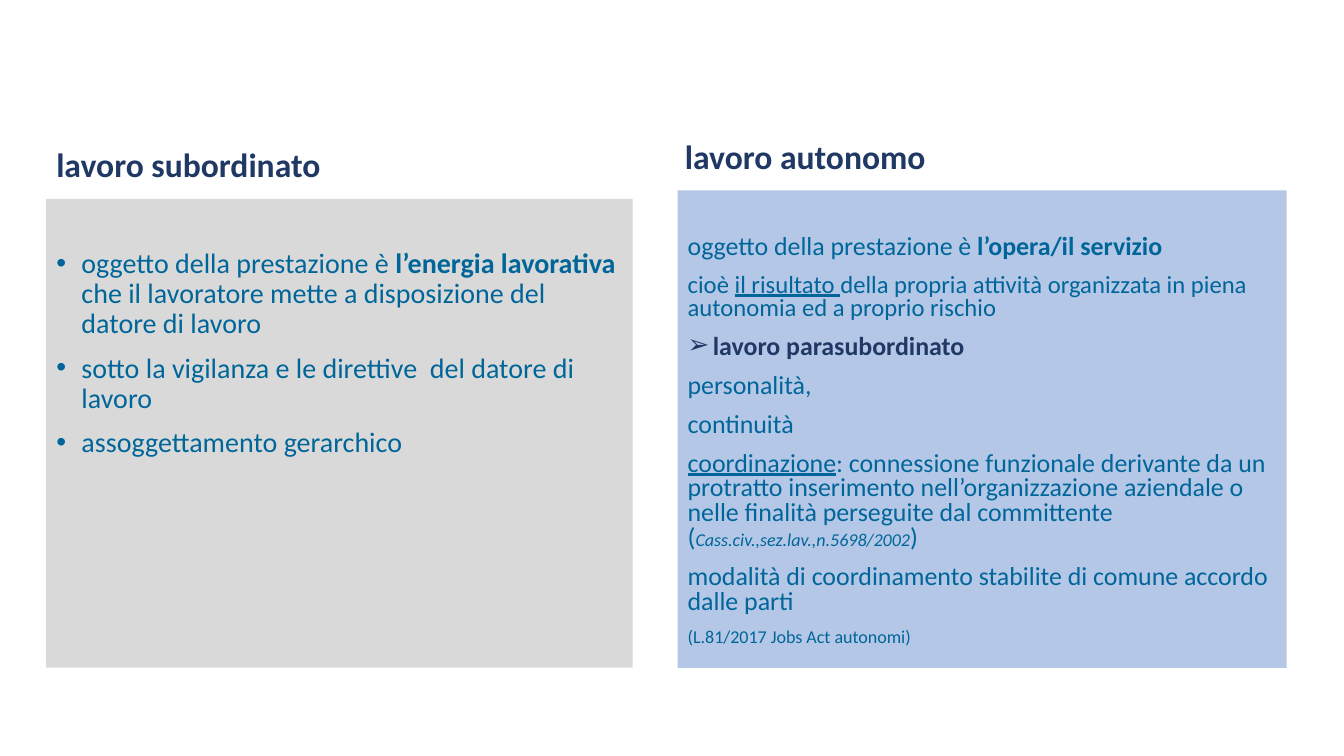
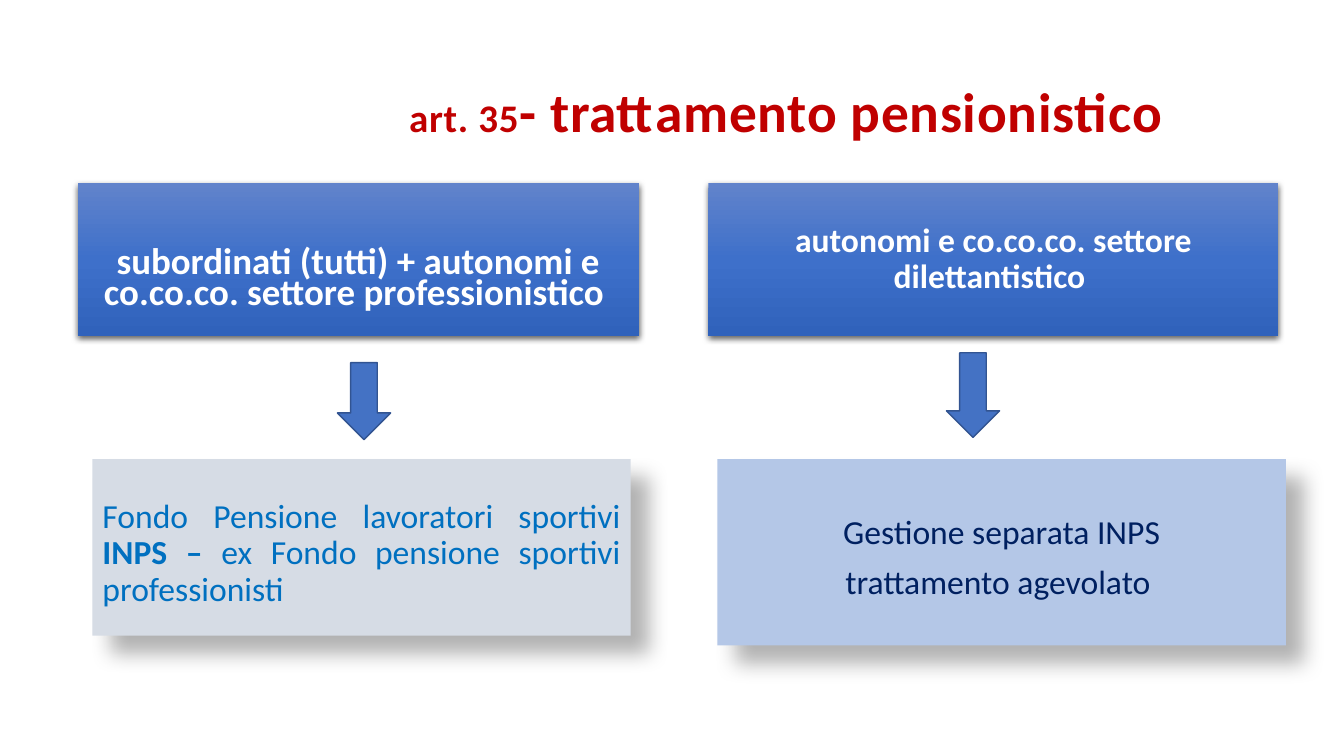
from dataclasses import dataclass

from pptx import Presentation
from pptx.dml.color import RGBColor
from pptx.enum.shapes import MSO_SHAPE
from pptx.enum.text import MSO_ANCHOR as Anchor, MSO_AUTO_SIZE as AutoSize, PP_ALIGN as Align
from pptx.oxml import parse_xml
from pptx.oxml.ns import nsdecls
from pptx.util import Pt

FONT = "Calibri"
NAVY = RGBColor(0x20, 0x38, 0x64)
DEEP_BLUE = RGBColor(0x00, 0x20, 0x60)
TEAL = RGBColor(0x00, 0x66, 0x99)
SKY = RGBColor(0x00, 0x70, 0xC0)
RED = RGBColor(0xC0, 0x00, 0x00)
WHITE = RGBColor(0xFF, 0xFF, 0xFF)
GREY = RGBColor(0xD9, 0xD9, 0xD9)
BLUE_GREY = RGBColor(0xD6, 0xDC, 0xE5)
LIGHT_BLUE = RGBColor(0xB4, 0xC7, 0xE7)
ARROW_FILL = RGBColor(0x44, 0x72, 0xC4)
ARROW_LINE = RGBColor(0x32, 0x54, 0x91)
HEADER_GRADIENT = (
    (0, RGBColor(0x61, 0x83, 0xCB)),
    (50, RGBColor(0x3E, 0x70, 0xCA)),
    (100, RGBColor(0x30, 0x62, 0xBB)),
)
INSET = 3.6
BULLET_INDENT = 18


@dataclass(frozen=True)
class Span:
    text: str
    size: float | None = None
    color: RGBColor | None = None
    bold: bool = False
    italic: bool = False
    underline: bool = False


@dataclass(frozen=True)
class Line:
    spans: tuple[Span, ...]
    bullet: str = ""


@dataclass(frozen=True)
class Shadow:
    opacity: int
    blur: float
    distance: float
    angle: int


@dataclass(frozen=True)
class Panel:
    """A placeholder of the comparison layout, with its frame and text format."""

    index: int
    frame: tuple[float, float, float, float]
    lines: tuple[Line, ...]
    size: float
    color: RGBColor
    fill: RGBColor | None = None
    gradient: tuple = ()
    shadow: Shadow | None = None
    align: Align = Align.LEFT
    anchor: Anchor = Anchor.TOP
    spacing: float = 0.9
    top: float = INSET
    right: float = 7.2
    bottom: float = INSET
    tracking: float = 0


HEADER_SHADOW = Shadow(63, 4.5, 1.5, 90)
CARD_SHADOW = Shadow(30, 15, 18, 45)


def line(*spans: Span | str, bullet: str = "") -> Line:
    return Line(tuple(Span(s) if isinstance(s, str) else s for s in spans), bullet)


def add_gradient(shape, stops: tuple) -> None:
    stop_xml = "".join(
        f'<a:gs pos="{position * 1000}"><a:srgbClr val="{color}"/></a:gs>'
        for position, color in stops
    )
    shape._element.spPr.append(parse_xml(
        f'<a:gradFill {nsdecls("a")} rotWithShape="1"><a:gsLst>{stop_xml}</a:gsLst>'
        '<a:lin ang="5400000" scaled="0"/></a:gradFill>'))


def add_shadow(shape, shadow: Shadow) -> None:
    shape._element.spPr.append(parse_xml(
        f'<a:effectLst {nsdecls("a")}><a:outerShdw blurRad="{Pt(shadow.blur)}" '
        f'dist="{Pt(shadow.distance)}" dir="{shadow.angle * 60000}" rotWithShape="0">'
        f'<a:srgbClr val="000000"><a:alpha val="{shadow.opacity * 1000}"/></a:srgbClr>'
        '</a:outerShdw></a:effectLst>'))


def set_bullet(paragraph, bullet: str) -> None:
    properties = paragraph._p.get_or_add_pPr()
    indent = Pt(BULLET_INDENT) if bullet else 0
    properties.set("marL", str(indent))
    properties.set("indent", str(-indent))
    tag = f'buChar {nsdecls("a")} char="{bullet}"' if bullet else f'buNone {nsdecls("a")}'
    properties.append(parse_xml(f"<a:{tag}/>"))


def add_run(paragraph, text: str, *, size: float, color: RGBColor, bold: bool = False,
            italic: bool = False, underline: bool = False, tracking: float = 0) -> None:
    run = paragraph.add_run()
    run.text = text
    font = run.font
    font.name, font.size, font.color.rgb = FONT, Pt(size), color
    font.bold, font.italic, font.underline = bold, italic, underline
    if tracking:
        run._r.get_or_add_rPr().set("spc", str(round(tracking * 100)))


def fill_panel(slide, panel: Panel) -> None:
    shape = next(p for p in slide.placeholders if p.placeholder_format.idx == panel.index)
    shape.left, shape.top, shape.width, shape.height = map(Pt, panel.frame)
    if panel.fill is not None:
        shape.fill.solid()
        shape.fill.fore_color.rgb = panel.fill
    if panel.gradient:
        add_gradient(shape, panel.gradient)
    if panel.shadow:
        add_shadow(shape, panel.shadow)

    frame = shape.text_frame
    frame.word_wrap, frame.auto_size = True, AutoSize.NONE
    frame.vertical_anchor = panel.anchor
    frame.margin_top, frame.margin_bottom = Pt(panel.top), Pt(panel.bottom)
    frame.margin_left, frame.margin_right = Pt(7.2), Pt(panel.right)
    for number, item in enumerate(panel.lines):
        paragraph = frame.add_paragraph() if number else frame.paragraphs[0]
        paragraph.alignment = panel.align
        paragraph.line_spacing = panel.spacing
        paragraph.space_before = Pt(10 if number else 0)
        paragraph.space_after = Pt(0)
        set_bullet(paragraph, item.bullet)
        for span in item.spans:
            add_run(paragraph, span.text, size=span.size or panel.size,
                    color=span.color or panel.color, bold=span.bold, italic=span.italic,
                    underline=span.underline, tracking=panel.tracking)


def add_down_arrow(slide, left: float, top: float, height: float) -> None:
    arrow = slide.shapes.add_shape(
        MSO_SHAPE.DOWN_ARROW, Pt(left), Pt(top), Pt(38), Pt(height))
    arrow.shadow.inherit = False
    arrow.fill.solid()
    arrow.fill.fore_color.rgb = ARROW_FILL
    arrow.line.color.rgb = ARROW_LINE
    arrow.line.width = Pt(1)


def add_comparison(presentation, panels: tuple[Panel, ...]):
    """Add a comparison slide and drop the placeholders that no panel uses."""
    slide = presentation.slides.add_slide(presentation.slide_layouts[4])
    for panel in panels:
        fill_panel(slide, panel)
    used = {panel.index for panel in panels}
    for placeholder in list(slide.placeholders):
        if placeholder.placeholder_format.idx not in used:
            placeholder._element.getparent().remove(placeholder._element)
    return slide


def heading(index: int, frame: tuple, text: str) -> Panel:
    return Panel(index, frame, (line(Span(text, bold=True)),), 24, NAVY,
                 anchor=Anchor.BOTTOM, spacing=0.7)


def header_box(index: int, frame: tuple, text: str, size: float, **options) -> Panel:
    return Panel(index, frame, (line(Span(text, bold=True)),), size, WHITE,
                 gradient=HEADER_GRADIENT, shadow=HEADER_SHADOW, align=Align.CENTER, **options)


WORK_TYPES = (
    heading(1, (33, 97, 439, 37.5), "lavoro subordinato"),
    Panel(2, (33, 142, 419, 335), (
        line("oggetto della prestazione è ", Span("l’energia lavorativa ", bold=True),
             "che il lavoratore mette a disposizione del datore di lavoro", bullet="•"),
        line("sotto la vigilanza e le direttive  del datore di lavoro", bullet="•"),
        line("assoggettamento gerarchico", bullet="•"),
    ), 20, TEAL, fill=GREY, top=36),
    heading(3, (482, 97, 435, 32), "lavoro autonomo"),
    Panel(4, (484, 136, 435, 341), (
        line("oggetto della prestazione è ", Span("l’opera/il servizio", bold=True)),
        line(Span("cioè ", 17.6), Span("il risultato ", 17.6, underline=True),
             Span("della propria attività organizzata in piena autonomia "
                  "ed a proprio rischio", 17.6)),
        line(Span("lavoro parasubordinato", color=NAVY, bold=True), bullet="➢"),
        line("personalità,"),
        line("continuità"),
        line(Span("coordinazione", underline=True),
             ": connessione funzionale derivante da un protratto inserimento "
             "nell’organizzazione aziendale o nelle finalità perseguite dal committente (",
             Span("Cass.civ.,sez.lav.,n.5698/2002", 12.9, italic=True), ")"),
        line("modalità di coordinamento stabilite di comune accordo dalle parti"),
        line(Span("(L.81/2017 Jobs Act autonomi)", 12.9)),
    ), 18.5, TEAL, fill=LIGHT_BLUE, spacing=0.8, top=32),
)

PENSIONS = (
    Panel(0, (207, 28, 643, 79), (
        line(Span("art. 35", 27.9, bold=True),
             Span("- trattamento pensionistico", bold=True)),
    ), 39.6, RED, align=Align.RIGHT, anchor=Anchor.BOTTOM, right=19, tracking=0.5),
    header_box(1, (55.5, 131, 401, 109),
               "subordinati (tutti) + autonomi e co.co.co. settore professionistico ",
               26.4, anchor=Anchor.BOTTOM, spacing=0.7, bottom=17.5),
    Panel(2, (66, 328, 384.5, 126), (
        line("Fondo Pensione lavoratori sportivi ", Span("INPS – ", bold=True),
             "ex Fondo pensione sportivi professionisti"),
    ), 24, SKY, fill=BLUE_GREY, shadow=CARD_SHADOW, align=Align.JUSTIFY,
        anchor=Anchor.MIDDLE, top=13),
    header_box(3, (506, 131, 407, 109), "autonomi e co.co.co. settore dilettantistico ",
               24, anchor=Anchor.MIDDLE),
    Panel(4, (512.5, 328, 406, 133), (
        line("Gestione separata INPS"),
        line("trattamento agevolato "),
    ), 24, DEEP_BLUE, fill=LIGHT_BLUE, shadow=CARD_SHADOW, align=Align.CENTER, top=40),
)


def main() -> None:
    presentation = Presentation()
    presentation.slide_width, presentation.slide_height = Pt(960), Pt(540)
    add_comparison(presentation, WORK_TYPES)
    pension_slide = add_comparison(presentation, PENSIONS)
    add_down_arrow(pension_slide, 241, 259, 55)
    add_down_arrow(pension_slide, 676, 252, 60.5)
    presentation.save("out.pptx")


if __name__ == "__main__":
    main()
